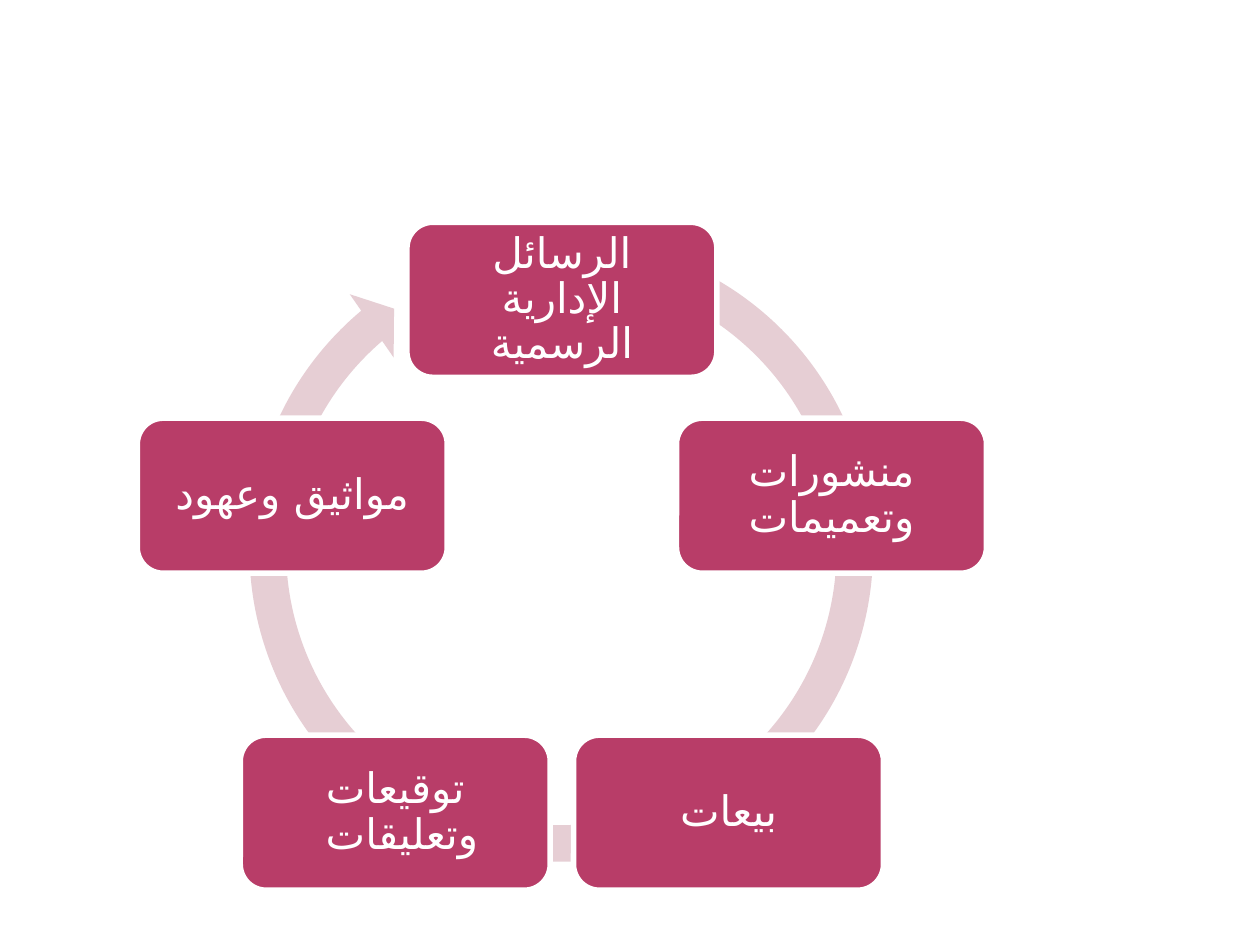
from math import cos, radians, sin

from lxml import etree
from pptx import Presentation
from pptx.dml.color import RGBColor
from pptx.enum.shapes import MSO_SHAPE
from pptx.enum.text import MSO_ANCHOR, PP_ALIGN
from pptx.oxml.ns import qn
from pptx.util import Inches, Pt

ROUNDED = MSO_SHAPE.ROUNDED_RECTANGLE
CIRCULAR_ARROW = MSO_SHAPE.CIRCULAR_ARROW
MIDDLE = MSO_ANCHOR.MIDDLE
CENTER = PP_ALIGN.CENTER

COLORS = {"box": "B83D68", "arrow": "E6CED4", "white": "FFFFFF"}
FONT = "Karla"
ARABIC_FONT = "DejaVu Sans"  # Karla has no Arabic letters

# Clockwise from the top
LABELS = [
    "الرسائل الإدارية الرسمية",
    "منشورات وتعميمات",
    "بيعات",
    "توقيعات وتعليقات ",
    "مواثيق وعهود",
]
CENTER_X, CENTER_Y, RADIUS = 4.46, 4.63, 2.25
BOX_WIDTH, BOX_HEIGHT = 2.46, 1.23

presentation = Presentation()
presentation.slide_width = Inches(10)
presentation.slide_height = Inches(7.5)
slide = presentation.slides.add_slide(presentation.slide_layouts[6])

# Ring arrow behind the boxes
ring = slide.shapes.add_shape(
    CIRCULAR_ARROW, Inches(1.82), Inches(1.73), Inches(5.27), Inches(5.27))
for index, value in enumerate([0.055, 3.307, 137.86, 173.799, 0.058]):
    ring.adjustments[index] = value
ring.shadow.inherit = False
ring.fill.solid()
ring.fill.fore_color.rgb = RGBColor.from_string(COLORS["arrow"])
ring.line.fill.background()

# Boxes at equal angles around the cycle
for index, label in enumerate(LABELS):
    angle = radians(index * 360 / len(LABELS))
    left = CENTER_X + RADIUS * sin(angle) - BOX_WIDTH / 2
    top = CENTER_Y - RADIUS * cos(angle) - BOX_HEIGHT / 2
    box = slide.shapes.add_shape(
        ROUNDED, Inches(left), Inches(top), Inches(BOX_WIDTH), Inches(BOX_HEIGHT))
    box.shadow.inherit = False
    box.fill.solid()
    box.fill.fore_color.rgb = RGBColor.from_string(COLORS["box"])
    box.line.color.rgb = RGBColor.from_string(COLORS["white"])
    box.line.width = Pt(3.15)

    text_frame = box.text_frame
    text_frame.word_wrap = True
    text_frame.vertical_anchor = MIDDLE
    text_frame.margin_left = text_frame.margin_right = Inches(0.1)
    text_frame.margin_top = text_frame.margin_bottom = Inches(0.1)
    text_frame.text = label

    # Right-to-left label
    paragraph = text_frame.paragraphs[0]
    paragraph.alignment = CENTER
    paragraph.line_spacing = 0.9
    paragraph._p.get_or_add_pPr().set("rtl", "1")
    font = paragraph.runs[0].font
    font.size = Pt(24)
    font.name = FONT
    font.color.rgb = RGBColor.from_string(COLORS["white"])
    complex_font = etree.SubElement(font._element, qn("a:cs"))
    complex_font.set("typeface", ARABIC_FONT)

presentation.save("out.pptx")
